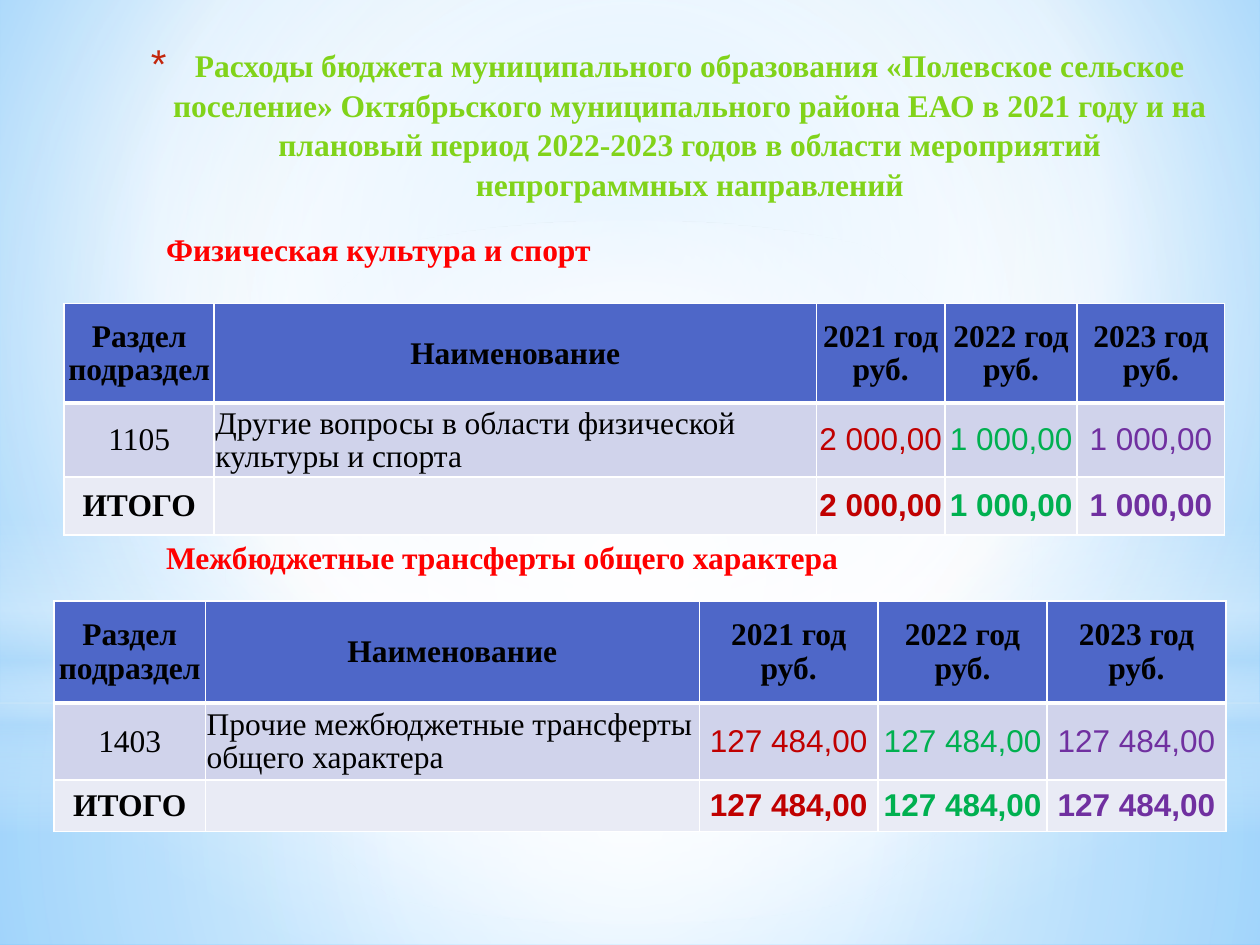
from dataclasses import dataclass

from lxml import etree
from pptx import Presentation
from pptx.dml.color import RGBColor
from pptx.enum import shapes, text
from pptx.oxml import ns
from pptx.util import Inches, Pt

SERIF, SANS = "Times New Roman", "Arial"
YEAR_COLORS = ["C00000", "00B050", "7030A0"]
ROW_FILLS = ["4E67C8", "D0D3EB", "E9EBF5"]
CENTER = text.PP_ALIGN.CENTER
LEFT = text.PP_ALIGN.LEFT


@dataclass
class Gradient:
    stops: list[tuple[int, str, int]]
    focus: tuple[int, int, int, int] | None = (50, 50, 50, 50)


@dataclass
class Wash:
    preset: shapes.MSO_SHAPE
    top: float
    height: float
    gradient: Gradient


@dataclass
class BudgetTable:
    heading: str
    heading_top: float
    heading_width: float
    left: float
    top: float
    columns: list[float]
    rows: list[float]
    code: str
    item: str
    amounts: list[str]


BACKGROUND = Gradient(
    [(0, "9ED5FF", 100), (60, "FFFFFF", 100), (100, "5BB9FF", 100)], (20, 10, 20, 60))
WASHES = [
    Wash(shapes.MSO_SHAPE.RECTANGLE, 5.58, 1.92,
         Gradient([(0, "FFFFFF", 91), (37, "FFFFFF", 76), (100, "B4DCFA", 79)])),
    Wash(shapes.MSO_SHAPE.RECTANGLE, 0, 5.58,
         Gradient([(0, "FFFFFF", 89), (48, "FFFFFF", 62), (100, "B4DCFA", 79)])),
    Wash(shapes.MSO_SHAPE.RECTANGLE, 4.12, 2.5,
         Gradient([(0, "FFFFFF", 0), (29, "FFFFFF", 30), (45, "B4DCFA", 40),
                   (55, "FFFFFF", 26), (65, "B4DCFA", 60), (100, "FFFFFF", 0)], None)),
    Wash(shapes.MSO_SHAPE.OVAL, 1.75, 5.58,
         Gradient([(0, "FFFFFF", 100), (56, "FFFFFF", 0)])),
]
TABLES = [
    BudgetTable("Физическая культура и спорт", 1.78, 5.28, 0.51, 2.41,
                [1.19, 4.78, 1.02, 1.05, 1.17], [0.79, 0.57, 0.46], "1105",
                "Другие вопросы в области физической культуры и спорта",
                ["2 000,00", "1 000,00", "1 000,00"]),
    BudgetTable("Межбюджетные трансферты общего характера", 4.22, 8.42, 0.43, 4.77,
                [1.2, 3.92, 1.42, 1.34, 1.42], [0.81, 0.61, 0.41], "1403",
                "Прочие межбюджетные трансферты общего характера",
                ["127 484,00"] * 3),
]
TITLE = ("Расходы бюджета муниципального образования «Полевское сельское поселение» "
         "Октябрьского муниципального района ЕАО в 2021 году и на плановый период "
         "2022-2023 годов в области мероприятий непрограммных направлений")


def rgb(value: str) -> RGBColor:
    return RGBColor.from_string(value)


def add_node(parent, tag: str, **attributes):
    node = etree.SubElement(parent, ns.qn(tag))
    for name, value in attributes.items():
        node.set(name, str(value))
    return node


def apply_gradient(fill, holder, gradient: Gradient) -> None:
    fill.gradient()
    node = holder.find(".//" + ns.qn("a:gradFill"))
    for child in list(node):
        node.remove(child)
    stops = add_node(node, "a:gsLst")
    for position, color, opacity in gradient.stops:
        stop = add_node(stops, "a:gs", pos=position * 1000)
        color_node = add_node(stop, "a:srgbClr", val=color)
        if opacity < 100:
            add_node(color_node, "a:alpha", val=opacity * 1000)
    if gradient.focus is None:
        add_node(node, "a:lin", ang=5400000, scaled=0)
    else:
        circle = add_node(node, "a:path", path="circle")
        sides = zip("ltrb", gradient.focus)
        add_node(circle, "a:fillToRect", **{side: value * 1000 for side, value in sides})


def add_wash(slide, wash: Wash) -> None:
    shape = slide.shapes.add_shape(
        wash.preset, 0, Inches(wash.top), Inches(10), Inches(wash.height))
    shape.shadow.inherit = False
    shape.line.fill.background()
    apply_gradient(shape.fill, shape.element, wash.gradient)


def add_run(paragraph, words: str, color: str, font: str = SERIF, bold: bool = True) -> None:
    run = paragraph.add_run()
    run.text = words
    run.font.name = font
    run.font.size = Pt(18)
    run.font.bold = bold
    run.font.color.rgb = rgb(color)


def format_title(slide) -> None:
    title = slide.shapes.title
    slide.shapes.element.append(title.element)
    title.left, title.top = Inches(0.83), Inches(0.3)
    title.width, title.height = Inches(8.94), Inches(1.32)
    frame = title.text_frame
    frame.word_wrap = True
    frame.auto_size = text.MSO_AUTO_SIZE.NONE
    frame.vertical_anchor = text.MSO_ANCHOR.TOP
    paragraph = frame.paragraphs[0]
    paragraph.alignment = CENTER
    paragraph.line_spacing = 1.05
    add_run(paragraph, TITLE, "81D31A")
    properties = paragraph._p.get_or_add_pPr()
    properties.set("marL", str(Inches(0.35)))
    properties.set("indent", str(-Inches(0.35)))
    add_node(add_node(properties, "a:buClr"), "a:srgbClr", val="C3260C")
    add_node(properties, "a:buSzPct", val=128000)
    add_node(properties, "a:buFont", typeface=SANS)
    add_node(properties, "a:buChar", char="*")


def add_heading(slide, budget: BudgetTable) -> None:
    box = slide.shapes.add_textbox(Inches(1.22), Inches(budget.heading_top),
                                   Inches(budget.heading_width), Inches(0.4))
    box.text_frame.word_wrap = True
    add_run(box.text_frame.paragraphs[0], budget.heading, "FF0000")


def format_cell(cell, words: str, row: int, column: int) -> None:
    properties = cell._tc.get_or_add_tcPr()
    widths = {"L": 1, "R": 1, "T": 3 if row == 1 else 1, "B": 3 if row == 0 else 1}
    for side, width in widths.items():
        line = add_node(properties, f"a:ln{side}", w=Pt(width))
        add_node(add_node(line, "a:solidFill"), "a:srgbClr", val="FFFFFF")
    cell.fill.solid()
    cell.fill.fore_color.rgb = rgb(ROW_FILLS[row])
    cell.vertical_anchor = text.MSO_ANCHOR.MIDDLE
    cell.margin_left = cell.margin_right = cell.margin_top = Inches(0.01)
    cell.margin_bottom = 0
    paragraph = cell.text_frame.paragraphs[0]
    paragraph.alignment = LEFT if (row, column) == (1, 1) else CENTER
    paragraph.line_spacing = 0.96
    is_amount = row > 0 and column > 1
    if words:
        add_run(paragraph, words, YEAR_COLORS[column - 2] if is_amount else "000000",
                SANS if is_amount else SERIF, row != 1)


def add_budget_table(slide, budget: BudgetTable) -> None:
    years = [f"{year} год руб." for year in (2021, 2022, 2023)]
    content = [["Раздел подраздел", "Наименование", *years],
               [budget.code, budget.item, *budget.amounts],
               ["ИТОГО", "", *budget.amounts]]
    table = slide.shapes.add_table(
        len(budget.rows), len(budget.columns), Inches(budget.left), Inches(budget.top),
        Inches(sum(budget.columns)), Inches(sum(budget.rows))).table
    for column, width in zip(table.columns, budget.columns):
        column.width = Inches(width)
    for row, height in zip(table.rows, budget.rows):
        row.height = Inches(height)
    for row, values in enumerate(content):
        for column, words in enumerate(values):
            format_cell(table.cell(row, column), words, row, column)


def main() -> None:
    presentation = Presentation()
    presentation.slide_width, presentation.slide_height = Inches(10), Inches(7.5)
    slide = presentation.slides.add_slide(presentation.slide_layouts[5])
    apply_gradient(slide.background.fill, slide.element, BACKGROUND)
    for wash in WASHES:
        add_wash(slide, wash)
    format_title(slide)
    for budget in TABLES:
        add_heading(slide, budget)
        add_budget_table(slide, budget)
    presentation.save("out.pptx")


if __name__ == "__main__":
    main()
